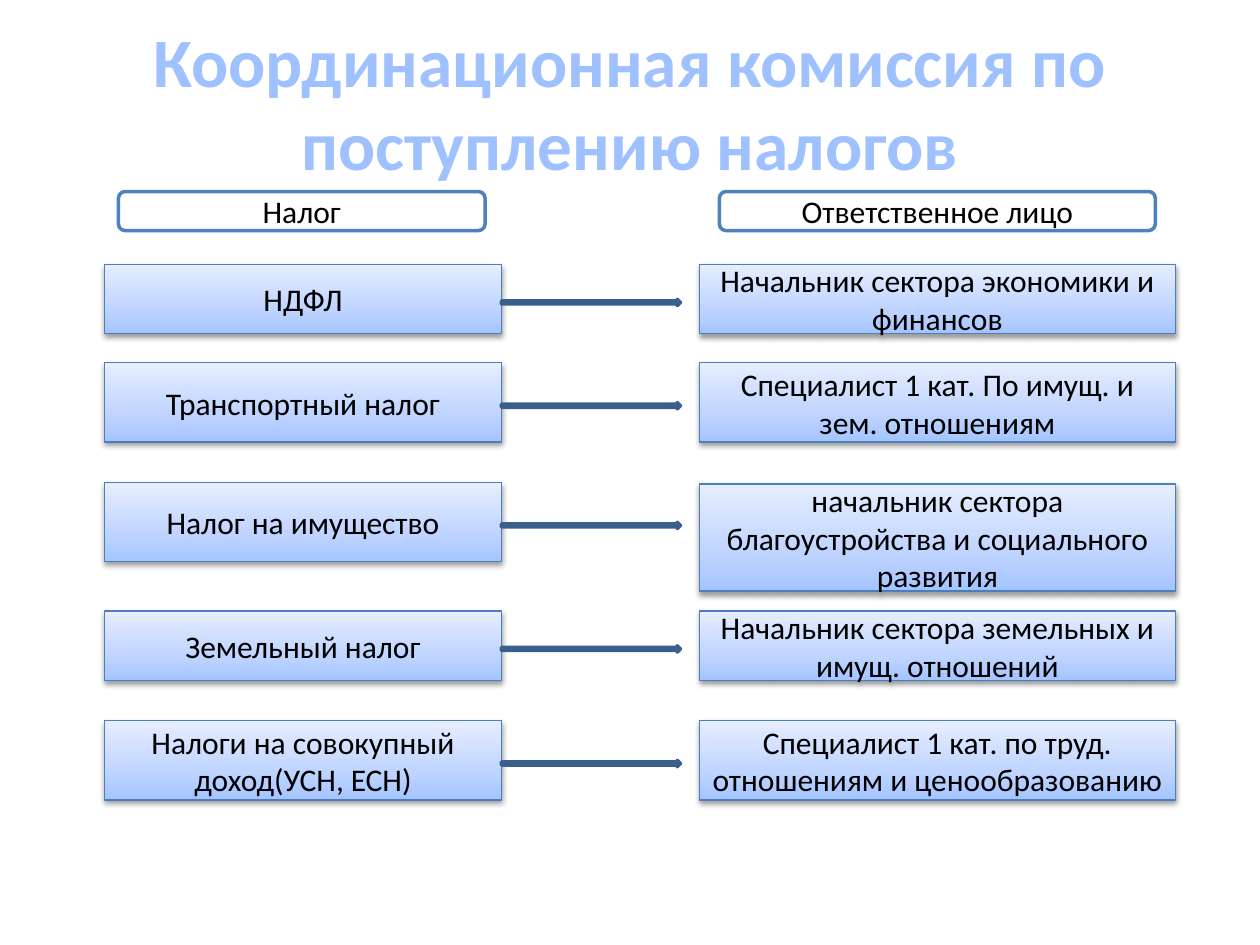
from lxml.etree import SubElement
from pptx import Presentation
from pptx.dml.color import RGBColor
from pptx.enum.shapes import MSO_SHAPE
from pptx.enum.text import MSO_ANCHOR, MSO_AUTO_SIZE, PP_ALIGN
from pptx.oxml.ns import qn
from pptx.util import Inches, Pt

TAX_LEFT, TAX_WIDTH = 0.83, 3.15
PERSON_LEFT, PERSON_WIDTH = 5.55, 3.78
ARROW_WIDTH, ARROW_HEIGHT = 1.42, 0.05
BOX_STOPS = [(0, "A4C4FF"), (35, "BFD4FF"), (100, "E6EEFF")]

# tax, its top and height, responsible person, their top and height
ROWS = [
    ("НДФЛ", 2.1, 0.55,
     "Начальник сектора экономики и финансов", 2.1, 0.55),
    ("Транспортный налог", 2.88, 0.63,
     "Специалист 1 кат. По имущ. и зем. отношениям", 2.88, 0.63),
    ("Налог на имущество", 3.83, 0.63,
     "начальник сектора благоустройства и социального развития", 3.84, 0.85),
    ("Земельный налог", 4.85, 0.55,
     "Начальник сектора земельных и имущ. отношений", 4.85, 0.55),
    ("Налоги на совокупный доход(УСН, ЕСН)", 5.72, 0.63,
     "Специалист 1 кат. по труд. отношениям и ценообразованию", 5.72, 0.63),
]


def rgb(value):
    return RGBColor.from_string(value)


def write(shape, text, size, color, bold=False):
    frame = shape.text_frame
    frame.word_wrap = True
    frame.auto_size = MSO_AUTO_SIZE.NONE
    frame.vertical_anchor = MSO_ANCHOR.MIDDLE
    paragraph = frame.paragraphs[0]
    paragraph.alignment = PP_ALIGN.CENTER
    run = paragraph.add_run()
    run.text = text
    font_format = {"name": "Calibri", "size": Pt(size), "bold": bold}
    for attribute, value in font_format.items():
        setattr(run.font, attribute, value)
    run.font.color.rgb = rgb(color)


def add_title(slide, text):
    title = slide.shapes.title
    place = {"left": 0.5, "top": 0.3, "width": 9, "height": 1.01}
    for attribute, value in place.items():
        setattr(title, attribute, Inches(value))
    write(title, text, 39.6, "A0C1FF", bold=True)


def add_outlined(slide, preset, place, line_color, line_width):
    shape = slide.shapes.add_shape(preset, *map(Inches, place))
    shape.shadow.inherit = False
    shape.line.color.rgb = rgb(line_color)
    shape.line.width = Pt(line_width)
    return shape


def fill_gradient(shape, stops):
    """Fill from the bottom up with stops of (percent, colour)."""
    shape.fill.gradient()
    shape.fill.gradient_angle = 90
    stop_list = shape.element.spPr.find(".//" + qn("a:gsLst"))
    for default_stop in list(stop_list):
        stop_list.remove(default_stop)
    for percent, color in stops:
        stop = SubElement(stop_list, qn("a:gs"), pos=str(percent * 1000))
        SubElement(stop, qn("a:srgbClr"), val=color)


def drop_shadow(shape):
    effects = shape.element.spPr.find(qn("a:effectLst"))
    shadow = SubElement(effects, qn("a:outerShdw"), blurRad=str(Pt(3.1)),
                        dist=str(Pt(1.6)), dir="5400000", rotWithShape="0")
    color = SubElement(shadow, qn("a:srgbClr"), val="000000")
    SubElement(color, qn("a:alpha"), val="38000")


def add_box(slide, text, *place):
    box = add_outlined(slide, MSO_SHAPE.RECTANGLE, place, "4B7EBC", 0.75)
    fill_gradient(box, BOX_STOPS)
    drop_shadow(box)
    write(box, text, 18, "000000")


def add_heading(slide, text, *place):
    heading = add_outlined(slide, MSO_SHAPE.ROUNDED_RECTANGLE, place, "4F81BD", 2)
    heading.fill.solid()
    heading.fill.fore_color.rgb = rgb("FFFFFF")
    write(heading, text, 18, "000000")


def add_arrow(slide, *place):
    arrow = add_outlined(slide, MSO_SHAPE.RIGHT_ARROW, place, "3A5F8C", 2)
    arrow.fill.solid()
    arrow.fill.fore_color.rgb = rgb("4F81BD")


def main():
    deck = Presentation()
    deck.slide_width, deck.slide_height = Inches(10), Inches(7.5)
    slide = deck.slides.add_slide(deck.slide_layouts[5])

    add_title(slide, "Координационная комиссия по поступлению налогов")
    add_heading(slide, "Налог", 0.94, 1.52, 2.91, 0.31)
    add_heading(slide, "Ответственное лицо", 5.71, 1.52, 3.46, 0.31)
    for tax, tax_top, tax_height, person, person_top, person_height in ROWS:
        add_box(slide, tax, TAX_LEFT, tax_top, TAX_WIDTH, tax_height)
        add_box(slide, person, PERSON_LEFT, person_top, PERSON_WIDTH, person_height)
        add_arrow(slide, TAX_LEFT + TAX_WIDTH, tax_top + tax_height / 2,
                  ARROW_WIDTH, ARROW_HEIGHT)

    deck.save("out.pptx")


if __name__ == "__main__":
    main()
